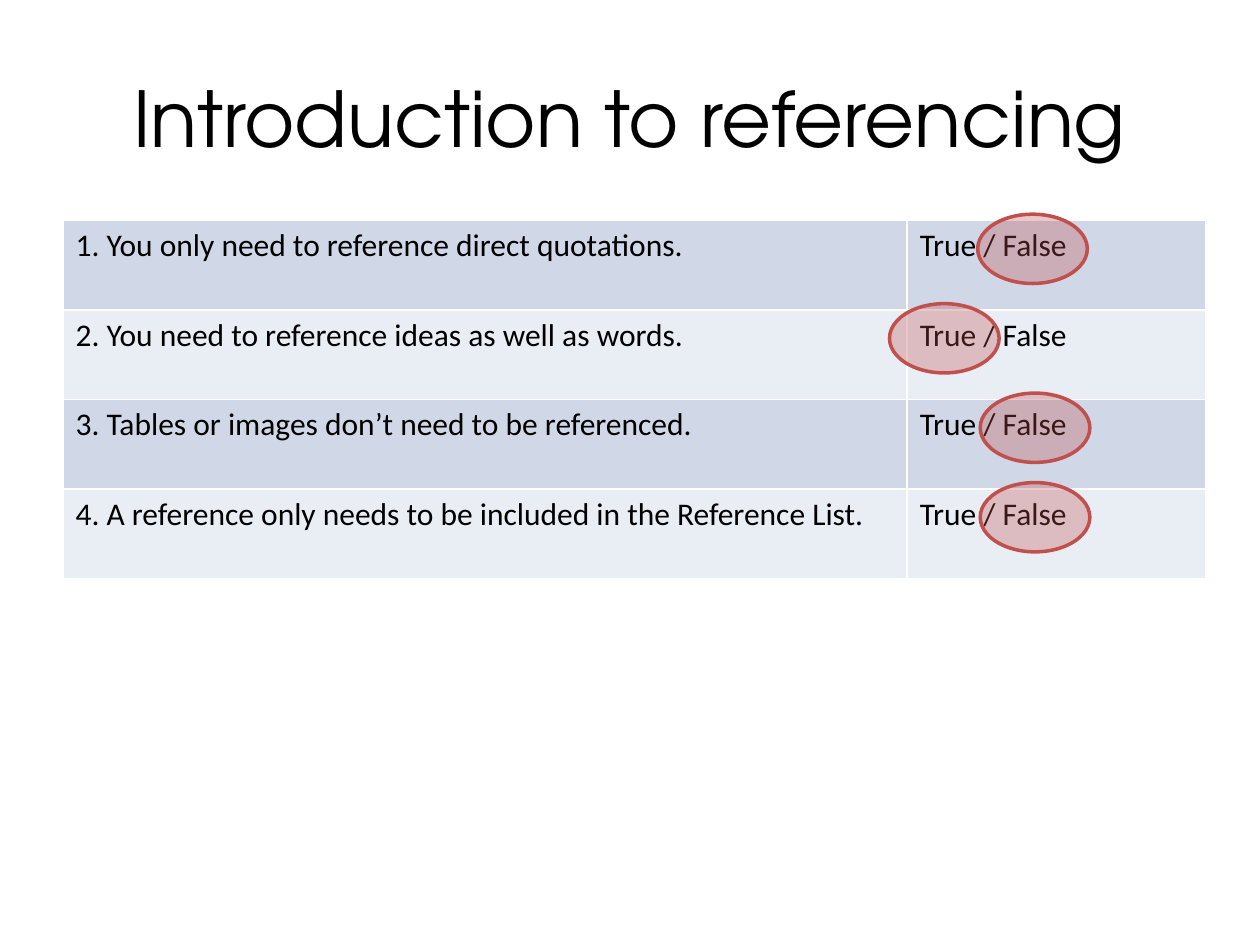
from dataclasses import dataclass

from lxml.etree import SubElement
from pptx import Presentation
from pptx.dml.color import RGBColor
from pptx.enum.shapes import MSO_SHAPE as Preset
from pptx.enum.text import MSO_ANCHOR as Anchor, PP_ALIGN as Align
from pptx.oxml.ns import qn
from pptx.slide import Slide
from pptx.util import Inches, Pt

BLACK = "000000"
RED = "C0504D"
BANDS = ("D0D8E8", "E9EDF4")
COLUMN_WIDTHS = (6.7, 2.37)
TABLE_LEFT, TABLE_TOP, ROW_HEIGHT = 0.5, 1.75, 0.71
RING_WIDTH, RING_HEIGHT, RING_RISE = 0.87, 0.55, 0.05
RING_OPACITY = 31


@dataclass(frozen=True)
class Question:
    statement: str
    ring_left: float


QUESTIONS = (
    Question("1. You only need to reference direct quotations.", 7.76),
    Question("2. You need to reference ideas as well as words.", 7.06),
    Question("3. Tables or images don’t need to be referenced.", 7.78),
    Question("4. A reference only needs to be included in the Reference List.", 7.78),
)


def color(value: str) -> RGBColor:
    return RGBColor.from_string(value)


def write(frame, text: str, font_name: str, size: int) -> None:
    paragraph = frame.paragraphs[0]
    run = paragraph.add_run()
    run.text = text
    for attribute, value in {"name": font_name, "size": Pt(size)}.items():
        setattr(run.font, attribute, value)
    run.font.color.rgb = color(BLACK)


def add_heading(slide: Slide, text: str) -> None:
    heading = slide.shapes.add_textbox(Inches(0.5), Inches(0.3), Inches(9), Inches(1.25))
    frame = heading.text_frame
    for attribute, value in {"word_wrap": True, "vertical_anchor": Anchor.MIDDLE}.items():
        setattr(frame, attribute, value)
    write(frame, text, "TeX Gyre Adventor", 44)
    frame.paragraphs[0].alignment = Align.CENTER


def add_quiz(slide: Slide) -> None:
    quiz = slide.shapes.add_table(
        len(QUESTIONS), len(COLUMN_WIDTHS), Inches(TABLE_LEFT), Inches(TABLE_TOP),
        Inches(sum(COLUMN_WIDTHS)), Inches(ROW_HEIGHT * len(QUESTIONS)),
    ).table
    quiz.first_row = False
    for column, width in zip(quiz.columns, COLUMN_WIDTHS):
        column.width = Inches(width)
    for index, (row, question) in enumerate(zip(quiz.rows, QUESTIONS)):
        row.height = Inches(ROW_HEIGHT)
        for cell, text in zip(row.cells, (question.statement, "True / False")):
            cell.fill.solid()
            cell.fill.fore_color.rgb = color(BANDS[index % len(BANDS)])
            write(cell.text_frame, text, "Calibri", 18)


def add_answer_ring(slide: Slide, left: float, top: float) -> None:
    ring = slide.shapes.add_shape(
        Preset.OVAL, Inches(left), Inches(top), Inches(RING_WIDTH), Inches(RING_HEIGHT)
    )
    ring.shadow.inherit = False
    ring.fill.solid()
    ring.fill.fore_color.rgb = color(RED)
    tint = ring.fill._xPr.find(qn("a:solidFill")).find(qn("a:srgbClr"))
    SubElement(tint, qn("a:alpha")).set("val", str(RING_OPACITY * 1000))
    ring.line.color.rgb = color(RED)
    ring.line.width = Pt(2)


def main() -> None:
    presentation = Presentation()
    presentation.slide_width, presentation.slide_height = Inches(10), Inches(7.5)
    slide = presentation.slides.add_slide(presentation.slide_layouts[6])
    add_heading(slide, "Introduction to referencing")
    add_quiz(slide)
    for index, question in enumerate(QUESTIONS):
        add_answer_ring(slide, question.ring_left, TABLE_TOP - RING_RISE + index * ROW_HEIGHT)
    presentation.save("out.pptx")


if __name__ == "__main__":
    main()
